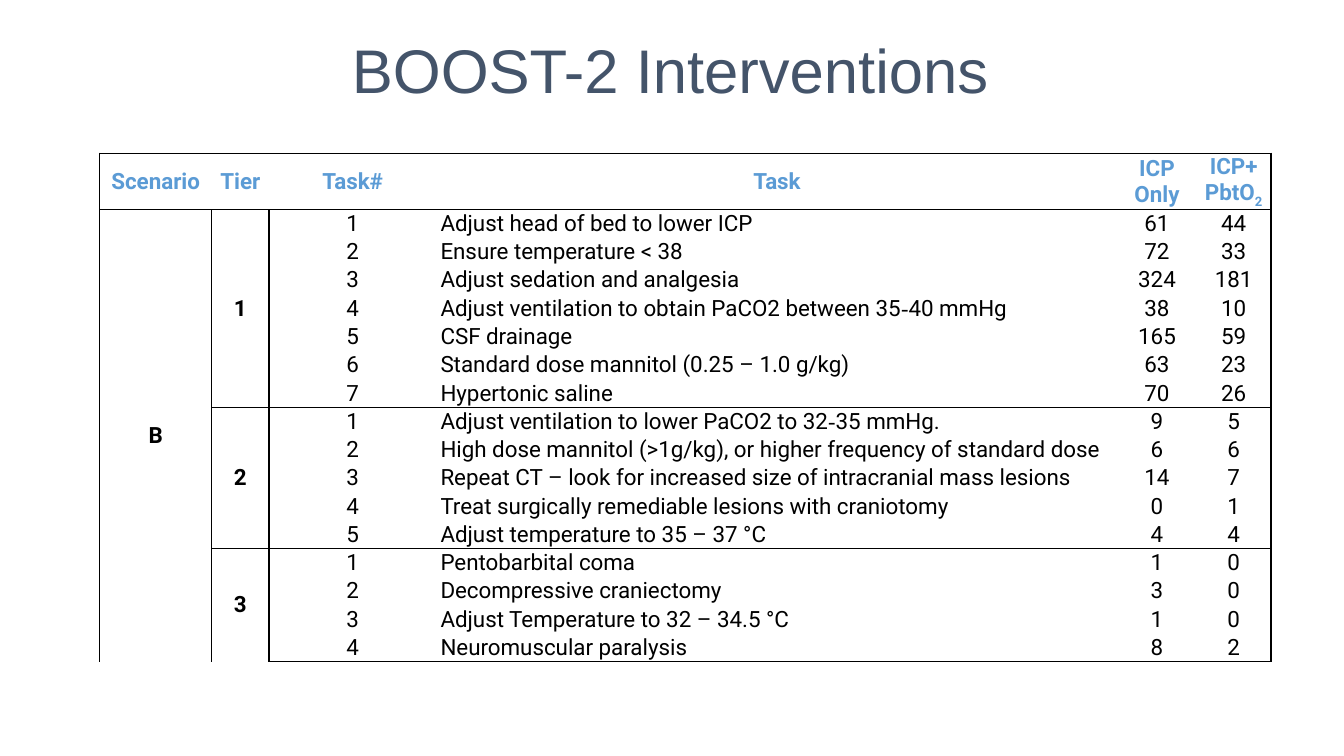
from dataclasses import dataclass
from itertools import accumulate

from lxml.etree import SubElement
from pptx import Presentation
from pptx.dml.color import RGBColor as RGB
from pptx.enum.text import MSO_ANCHOR as ANCHOR, PP_ALIGN as ALIGN
from pptx.oxml.ns import qn
from pptx.util import Pt

TITLE = "BOOST-2 Interventions"
HEADERS = ("Scenario", "Tier", "Task#", "Task", "ICP\vOnly", (("ICP+ PbtO", ""), ("2", "sub")))
SCENARIO = "B"
TIERS = (
    (
        ("Adjust head of bed to lower ICP", 61, 44),
        ("Ensure temperature < 38", 72, 33),
        ("Adjust sedation and analgesia", 324, 181),
        ((("Adjust ventilation to obtain PaCO2 between 35", ""), ("‐", "hyphen"), ("40 mmHg", "")), 38, 10),
        ("CSF drainage", 165, 59),
        ("Standard dose mannitol (0.25 – 1.0 g/kg)", 63, 23),
        ("Hypertonic saline", 70, 26),
    ),
    (
        ((("Adjust ventilation to lower PaCO2 to 32", ""), ("‐", "hyphen"), ("35 mmHg.", "")), 9, 5),
        ("High dose mannitol (>1g/kg), or higher frequency of standard dose", 6, 6),
        ("Repeat CT – look for increased size of intracranial mass lesions", 14, 7),
        ("Treat surgically remediable lesions with craniotomy", 0, 1),
        ("Adjust temperature to 35 – 37 °C", 4, 4),
    ),
    (
        ("Pentobarbital coma", 1, 0),
        ("Decompressive craniectomy", 3, 0),
        ("Adjust Temperature to 32 – 34.5 °C", 1, 0),
        ("Neuromuscular paralysis", 8, 2),
    ),
)
COL_WIDTHS = (80, 41, 119.5, 486.7, 56.2, 53.3)
HEADER_HEIGHT, ROW_HEIGHT = 40.4, 20.2
TABLE_LEFT, TABLE_TOP = 71.2, 109.4
TASK_COL = 3


@dataclass(frozen=True)
class Theme:
    title_font: str = "Arial"
    font: str = "Roboto"
    hyphen_font: str = "Times New Roman"
    title_size: int = 44
    size: int = 16
    title: str = "44546A"
    header: str = "5B9BD5"
    ink: str = "000000"
    rule: int = 1


THEME = Theme()


def style_run(r, font, size, color, bold=False):
    r.font.name, r.font.size, r.font.bold = font, Pt(size), bold
    r.font.color.rgb = RGB.from_string(color)


def write_cell(cell, content, color, bold, align):
    cell.vertical_anchor = ANCHOR.MIDDLE
    cell.margin_left = cell.margin_right = Pt(3)
    cell.margin_top = cell.margin_bottom = 0
    p = cell.text_frame.paragraphs[0]
    p.alignment = align
    runs = ((content, ""),) if isinstance(content, str) else content
    for text, kind in runs:
        for i, line in enumerate(text.split("\v")):
            if i:
                p.add_line_break()
            r = p.add_run()
            r.text = line
            font = THEME.hyphen_font if kind == "hyphen" else THEME.font
            style_run(r, font, THEME.size, color, bold)
            if kind == "sub":
                r.font._element.set("baseline", "-25000")


def set_borders(cell, edges):
    tc_pr = cell._tc.get_or_add_tcPr()
    for side, visible in edges.items():
        ln = SubElement(tc_pr, qn(f"a:{side}"), w=str(Pt(THEME.rule)))
        if visible:
            SubElement(SubElement(ln, qn("a:solidFill")), qn("a:srgbClr"), val=THEME.ink)
        else:
            SubElement(ln, qn("a:noFill"))
    cell.fill.background()


def add_title(s):
    sp = s.shapes.title
    sp.left, sp.top, sp.width, sp.height = Pt(164), Pt(19.4), Pt(630), Pt(90)
    tf = sp.text_frame
    tf.vertical_anchor = ANCHOR.TOP
    p = tf.paragraphs[0]
    p.alignment = ALIGN.CENTER
    r = p.add_run()
    r.text = TITLE
    style_run(r, THEME.title_font, THEME.title_size, THEME.title)


def add_task_table(s):
    tasks = [(str(n), *task) for tier in TIERS for n, task in enumerate(tier, 1)]
    n_rows, n_cols = len(tasks) + 1, len(HEADERS)
    tier_tops = list(accumulate(map(len, TIERS), initial=1))
    heights = [HEADER_HEIGHT] + [ROW_HEIGHT] * len(tasks)
    frame = s.shapes.add_table(n_rows, n_cols, Pt(TABLE_LEFT), Pt(TABLE_TOP),
                               Pt(sum(COL_WIDTHS)), Pt(sum(heights)))
    table = frame.table
    table.first_row = table.horz_banding = False
    for col, width in zip(table.columns, COL_WIDTHS):
        col.width = Pt(width)
    for row, height in zip(table.rows, heights):
        row.height = Pt(height)

    def across(line, col):
        return line in (0, 1, n_rows) or (col > 0 and line in tier_tops)

    def down(line, row):
        return line in (0, n_cols) or (row > 0 and line in (1, 2))

    for row in range(n_rows):
        for col in range(n_cols):
            set_borders(table.cell(row, col), {
                "lnL": down(col, row), "lnR": down(col + 1, row),
                "lnT": across(row, col), "lnB": across(row + 1, col)})

    for col, header in enumerate(HEADERS):
        write_cell(table.cell(0, col), header, THEME.header, True, ALIGN.CENTER)
    for row, task in enumerate(tasks, 1):
        for col, value in enumerate(task, 2):
            content = str(value) if isinstance(value, int) else value
            align = ALIGN.LEFT if col == TASK_COL else ALIGN.CENTER
            write_cell(table.cell(row, col), content, THEME.ink, False, align)

    spans = [(1, n_rows, 0, SCENARIO)]
    spans += [(top, end, 1, str(n)) for n, (top, end) in enumerate(zip(tier_tops, tier_tops[1:]), 1)]
    for top, end, col, label in spans:
        table.cell(top, col).merge(table.cell(end - 1, col))
        write_cell(table.cell(top, col), label, THEME.ink, True, ALIGN.CENTER)


def main():
    """Build the slide of interventions by tier and save it."""
    prs = Presentation()
    prs.slide_width, prs.slide_height = Pt(960), Pt(540)
    s = prs.slides.add_slide(prs.slide_layouts[5])
    add_task_table(s)
    add_title(s)
    prs.save("out.pptx")


if __name__ == "__main__":
    main()
